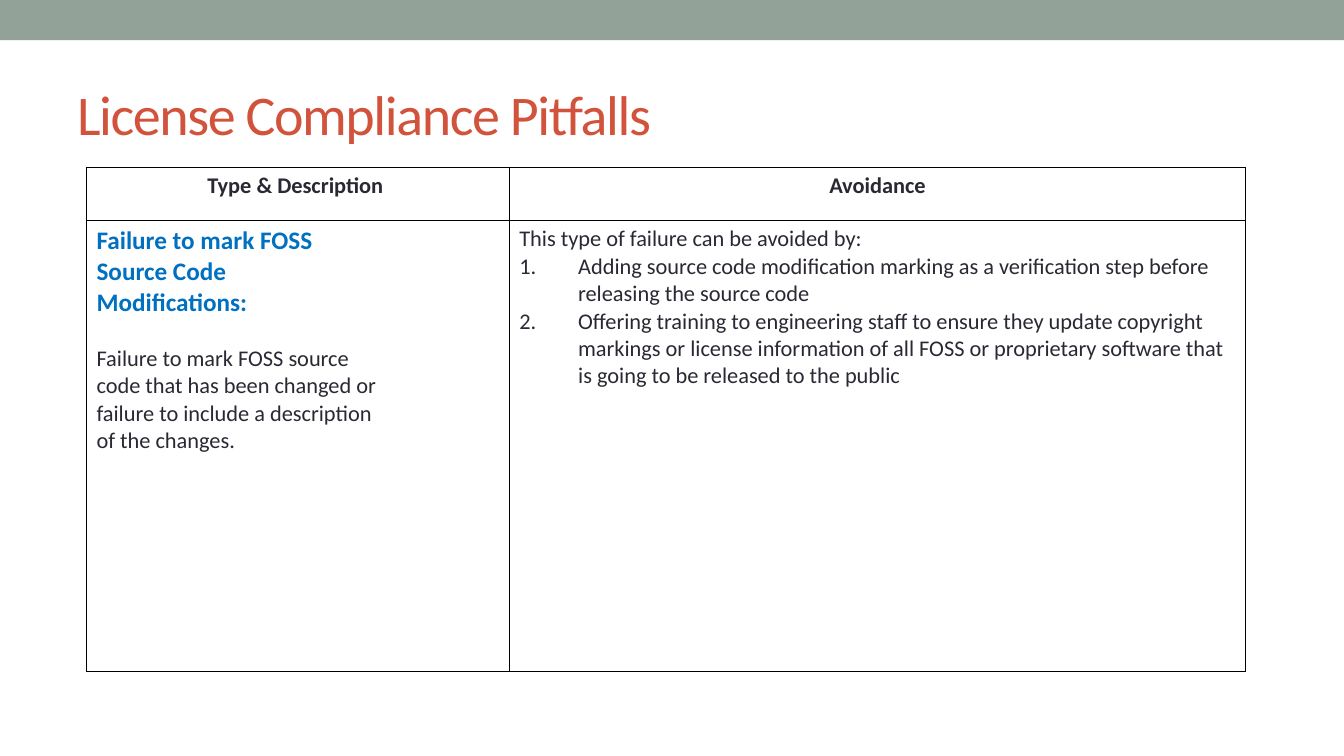
from lxml import etree
from pptx import Presentation
from pptx.dml.color import RGBColor
from pptx.enum.shapes import MSO_SHAPE
from pptx.enum.text import MSO_ANCHOR, PP_ALIGN
from pptx.oxml.ns import qn
from pptx.util import Pt

RECT = MSO_SHAPE.RECTANGLE
MIDDLE = MSO_ANCHOR.MIDDLE
CENTER, LEFT = PP_ALIGN.CENTER, PP_ALIGN.LEFT

FONT = "Calibri"
SAGE, RUST, INK, BLUE, BLACK = "93A299", "D2533C", "292934", "0070C0", "000000"
HEADERS = ["Type & Description ", "Avoidance"]
PITFALL = ["Failure to mark FOSS", "Source Code", "Modifications:"]
DESCRIPTION = [
    "Failure to mark FOSS source",
    "code that has been changed or",
    "failure to include a description",
    "of the changes.",
]
AVOIDANCE = "This type of failure can be avoided by:"
STEPS = [
    "Adding source code modification marking as a verification step before "
    "releasing the source code",
    "Offering training to engineering staff to ensure they update copyright "
    "markings or license information of all FOSS or proprietary software that "
    "is going to be released to the public",
]


def rgb(color):
    """Turn a hex string into a colour."""
    return RGBColor.from_string(color)


def add_band(slide, width, height):
    """Draw the plain band along the top edge."""
    sp = slide.shapes.add_shape(RECT, 0, 0, width, height)
    sp.shadow.inherit = False
    sp.fill.solid()
    sp.fill.fore_color.rgb = rgb(SAGE)
    sp.line.fill.background()


def style(p, size, color, bold=False):
    """Set the font of a whole paragraph."""
    p.font.name = FONT
    p.font.size = Pt(size)
    p.font.bold = bold
    p.font.color.rgb = rgb(color)


def add_title(slide, text):
    """Add the tightly spaced slide title."""
    tf = slide.shapes.add_textbox(Pt(48), Pt(42), Pt(864), Pt(77.5)).text_frame
    tf.word_wrap = True
    tf.vertical_anchor = MIDDLE
    p = tf.paragraphs[0]
    r = p.add_run()
    r.text = text
    style(p, 40, RUST)
    r.font._element.set("spc", "-100")


def add_lines(cell, lines, size=16, color=INK, bold=False, align=LEFT, before=0):
    """Append paragraphs to a cell and return them."""
    tf = cell.text_frame
    added = []
    for line in lines:
        p = tf.add_paragraph() if tf.text else tf.paragraphs[0]
        p.text = line
        p.alignment = align
        style(p, size, color, bold)
        added.append(p)
    added[0].space_before = Pt(before)
    return added


def number(p, indent):
    """Give a paragraph an automatic number with a hanging indent."""
    pPr = p._p.get_or_add_pPr()
    pPr.set("marL", str(Pt(indent)))
    pPr.set("indent", str(-Pt(indent)))
    bullet = etree.Element(qn("a:buAutoNum"), type="arabicPeriod")
    pPr.find(qn("a:defRPr")).addprevious(bullet)


def outline(cell):
    """Clear the fill of a cell and rule its four sides."""
    cell.fill.background()
    tcPr = cell._tc.get_or_add_tcPr()
    for i, side in enumerate(("lnL", "lnR", "lnT", "lnB")):
        ln = etree.Element(qn(f"a:{side}"), w=str(Pt(1)))
        fill = etree.SubElement(ln, qn("a:solidFill"))
        etree.SubElement(fill, qn("a:srgbClr"), val=BLACK)
        tcPr.insert(i, ln)


def add_grid(slide, left, top, widths, heights):
    """Add an unfilled, ruled table and return it."""
    frame = slide.shapes.add_table(
        len(heights), len(widths), Pt(left), Pt(top), Pt(sum(widths)), Pt(sum(heights))
    )
    table = frame.table
    table.first_row = table.horz_banding = False
    for column, width in zip(table.columns, widths):
        column.width = Pt(width)
    for row, height in zip(table.rows, heights):
        row.height = Pt(height)
    for cell in table.iter_cells():
        outline(cell)
    return table


def main():
    """Build the slide and save it."""
    prs = Presentation()
    prs.slide_width, prs.slide_height = Pt(960), Pt(540)
    slide = prs.slides.add_slide(prs.slide_layouts[6])
    add_band(slide, prs.slide_width, Pt(28.8))
    add_title(slide, "License Compliance Pitfalls")

    table = add_grid(slide, 61.8, 119.5, [302, 526], [38, 322])
    for col, header in enumerate(HEADERS):
        add_lines(table.cell(0, col), [header], bold=True, align=CENTER)
    pitfall, avoidance = table.cell(1, 0), table.cell(1, 1)
    add_lines(pitfall, PITFALL, size=18, color=BLUE, bold=True)
    add_lines(pitfall, DESCRIPTION, before=19.5)
    add_lines(avoidance, [AVOIDANCE])
    for p in add_lines(avoidance, STEPS):
        number(p, 42)
    prs.save("out.pptx")


if __name__ == "__main__":
    main()
